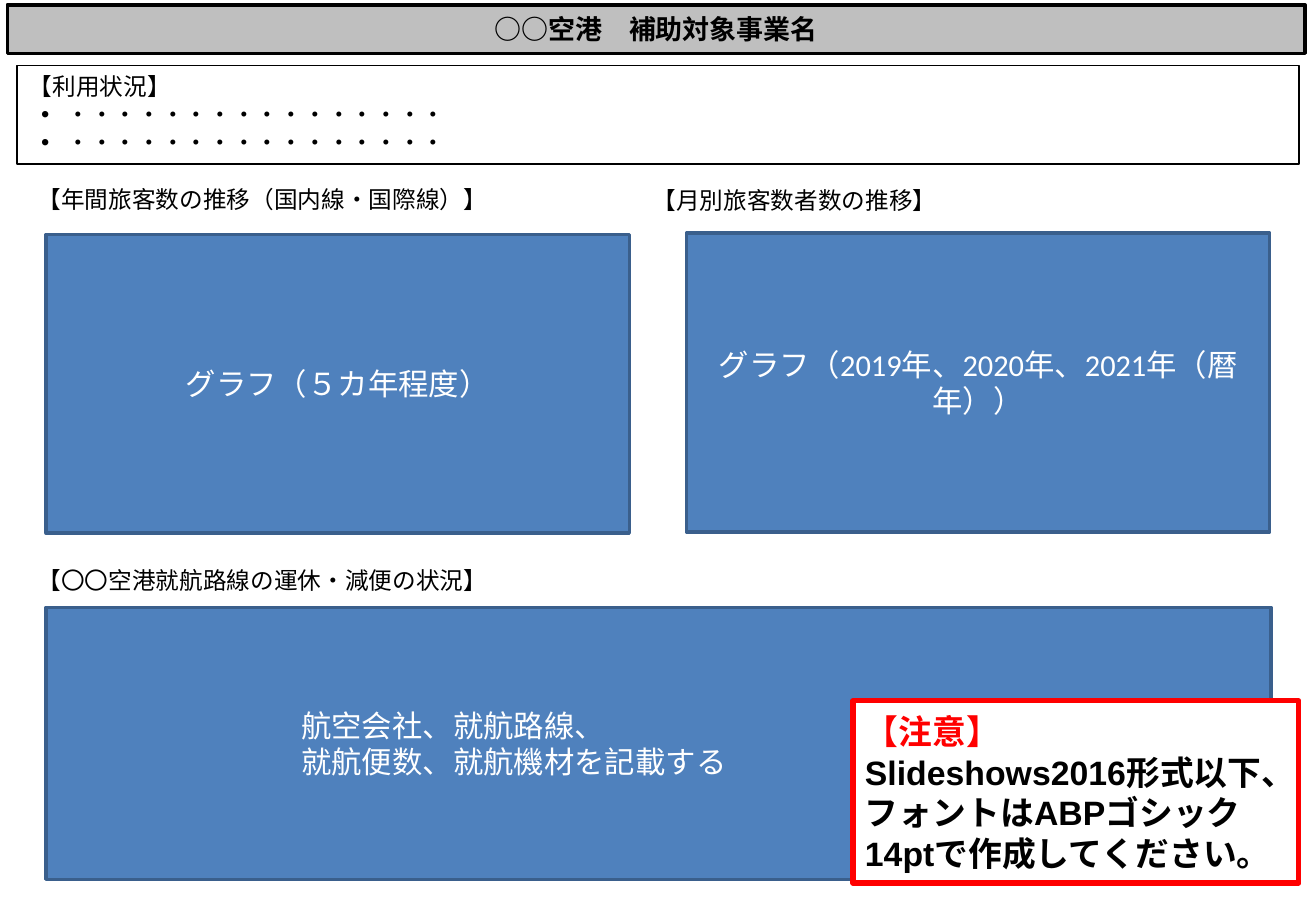
from lxml import etree
from pptx import Presentation
from pptx import util as u
from pptx.dml.color import RGBColor
from pptx.enum import shapes, text
from pptx.oxml.ns import qn

COLORS = {
    "black": "000000",
    "white": "FFFFFF",
    "gray": "BFBFBF",
    "blue": "4F81BD",
    "navy": "3A5F8C",
    "red": "FF0000",
}

TITLE = "○○空港\u3000補助対象事業名"
USAGE = ["【利用状況】", "・・・・・・・・・・・・・・・・", "・・・・・・・・・・・・・・・・"]
HEADINGS = [
    ("【年間旅客数の推移（国内線・国際線）】", 0.21, 1.47, 4.72),
    ("【月別旅客数者数の推移】", 5.27, 1.48, 4.72),
    ("【〇〇空港就航路線の運休・減便の状況】", 0.21, 4.61, 3.93),
]
CHART_AREAS = [
    ("グラフ（５カ年程度）", 0.38, 1.93),
    ("グラフ（2019年、2020年、2021年（暦年））", 5.65, 1.92),
]
ROUTES = "航空会社、就航路線、\n就航便数、就航機材を記載する"
NOTICE = ["【注意】", "Slideshows2016形式以下、", "フォントはABPゴシック14ptで作成してください。"]


def rgb(name):
    return RGBColor.from_string(COLORS[name])


def write(shape, lines, size, color="black", font="Calibri", bold=None,
          align=text.PP_ALIGN.LEFT, anchor=text.MSO_ANCHOR.MIDDLE):
    frame = shape.text_frame
    frame.word_wrap = True
    frame.vertical_anchor = anchor
    for index, line in enumerate(lines):
        paragraph = frame.add_paragraph() if index else frame.paragraphs[0]
        paragraph.text = line
        paragraph.alignment = align
        for run in paragraph.runs:
            run.font.size = u.Pt(size)
            run.font.name = font
            run.font.bold = bold
            run.font.color.rgb = rgb(color)
    return frame.paragraphs


def add_box(slide, left, top, width, height, fill, line, line_width):
    box = slide.shapes.add_shape(
        shapes.MSO_SHAPE.RECTANGLE,
        *(u.Inches(value) for value in (left, top, width, height)))
    box.shadow.inherit = False
    if fill:
        box.fill.solid()
        box.fill.fore_color.rgb = rgb(fill)
    else:
        box.fill.background()
    box.line.color.rgb = rgb(line)
    box.line.width = u.Pt(line_width)
    return box


def indent(paragraph, margin, first_line):
    properties = paragraph._p.get_or_add_pPr()
    properties.set("marL", str(u.Inches(margin)))
    properties.set("indent", str(u.Inches(first_line)))
    return properties


def add_bullet(paragraph):
    properties = indent(paragraph, 0.31, -0.21)
    etree.SubElement(properties, qn("a:buFont")).set("typeface", "Arial")
    etree.SubElement(properties, qn("a:buChar")).set("char", "•")


def main():
    presentation = Presentation()
    presentation.slide_width = u.Inches(10.83)
    presentation.slide_height = u.Inches(7.5)
    slide = presentation.slides.add_slide(presentation.slide_layouts[6])
    center = text.PP_ALIGN.CENTER

    title = add_box(slide, 0.06, 0.04, 10.68, 0.4, "gray", "black", 2)
    write(title, [TITLE], 16, font="Arial", bold=True, align=center)

    usage = add_box(slide, 0.14, 0.54, 10.55, 0.81, None, "black", 0.75)
    for paragraph in write(usage, USAGE, 14, anchor=text.MSO_ANCHOR.TOP)[1:]:
        add_bullet(paragraph)

    for heading, left, top, width in HEADINGS:
        label = slide.shapes.add_textbox(
            u.Inches(left), u.Inches(top), u.Inches(width), u.Inches(0.34))
        write(label, [heading], 14, anchor=text.MSO_ANCHOR.TOP)

    for caption, left, top in CHART_AREAS:
        area = add_box(slide, left, top, 4.8, 2.46, "blue", "navy", 2)
        write(area, [caption], 18, "white", align=center)

    routes = add_box(slide, 0.38, 5, 10.08, 2.24, "blue", "navy", 2)
    paragraph = write(routes, [ROUTES], 18, "white")[0]
    paragraph.level = 4
    indent(paragraph, 2, 0)

    notice = add_box(slide, 7.02, 5.77, 3.67, 1.5, "white", "red", 3)
    paragraphs = write(notice, NOTICE, 20, font="Arial", bold=True)
    paragraphs[0].runs[0].font.color.rgb = rgb("red")

    presentation.save("out.pptx")


if __name__ == "__main__":
    main()
